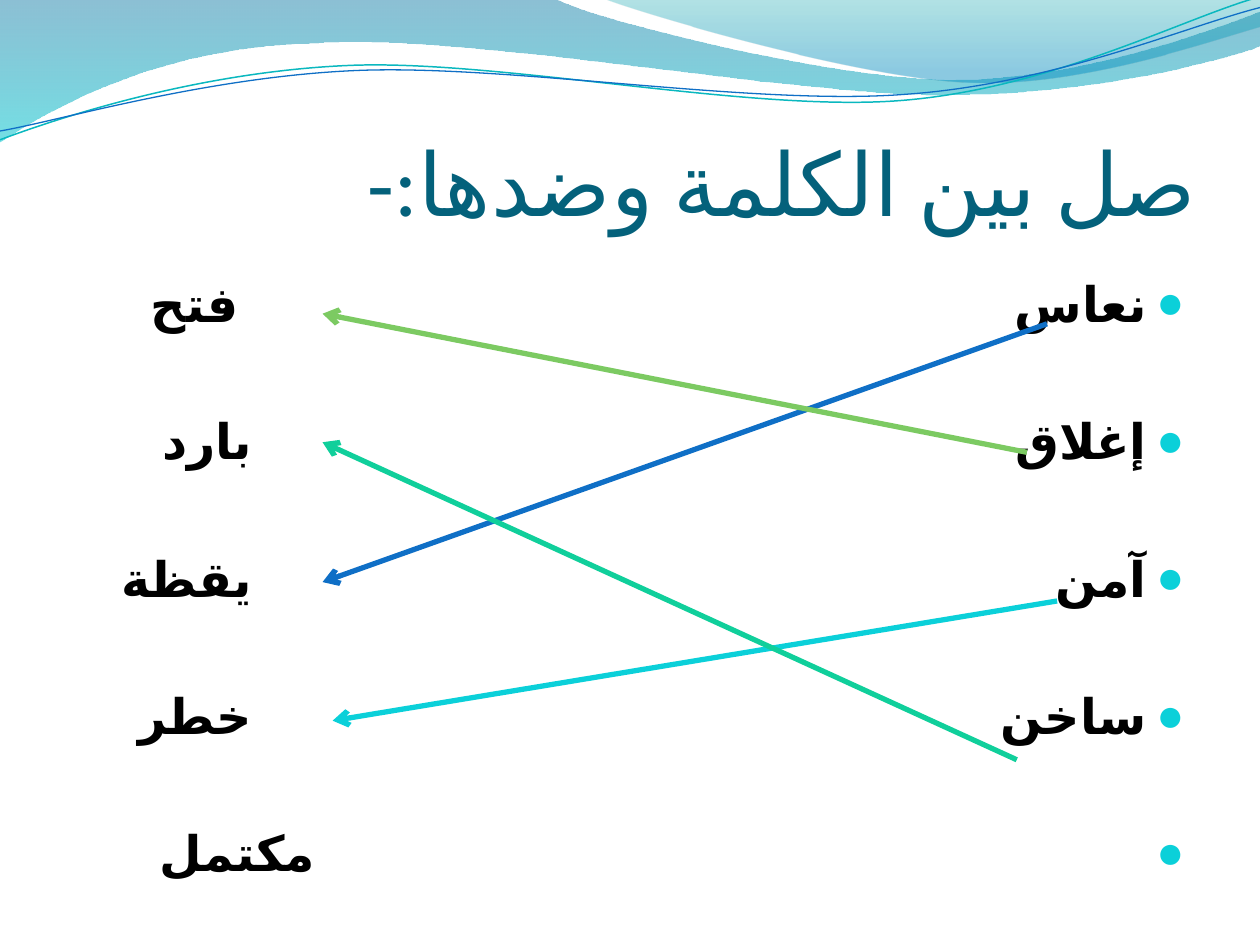
from lxml.etree import SubElement
from pptx import Presentation
from pptx.dml.color import RGBColor
from pptx.enum.lang import MSO_LANGUAGE_ID
from pptx.enum.shapes import MSO_CONNECTOR
from pptx.enum.text import MSO_ANCHOR, MSO_AUTO_SIZE, PP_ALIGN
from pptx.oxml.ns import qn
from pptx.util import Inches, Pt

DARK_TEAL = RGBColor(0x04, 0x61, 0x7B)
BLACK = RGBColor(0, 0, 0)
CYAN = RGBColor(0x0B, 0xD0, 0xD9)
BLUE = RGBColor(0x0F, 0x6F, 0xC6)
GREEN = RGBColor(0x7C, 0xCA, 0x62)
MINT = RGBColor(0x10, 0xCF, 0x9B)
WAVE_CYAN = RGBColor(0x0A, 0xB8, 0xBF)

HEADING = "صل بين الكلمة وضدها:-"
PROMPT_ROWS = [("نعاس", 0.3), ("إغلاق", 0.3), ("آمن", 0.3), ("ساخن", 0.3),
               ("مكتمل", 6.9)]
ANSWER_ROWS = [("فتح", 0.11), ("بارد", 0), ("يقظة", 0), ("خطر", 0)]
ROW_PITCH = Pt(78.5)

MATCHES = [
    ((8.31, 2.57), (2.56, 4.62), BLUE),
    ((8.15, 3.59), (2.56, 2.49), GREEN),
    ((8.39, 4.77), (2.64, 5.72), CYAN),
    ((8.07, 6.03), (2.56, 3.51), MINT),
]

WAVE_BANDS = [
    ([(0, 0), (4.4, -0.01),
      (4.76, 0.17, 6.64, 0.63, 7.58, 0.63), (8.53, 0.63, 9.58, 0.26, 10, 0.09),
      (10.01, 0.36),
      (9.83, 0.44, 8.7, 0.76, 7.46, 0.75), (6.22, 0.75, 3.82, 0.28, 2.57, 0.34),
      (1.29, 0.36, 0.46, 0.83, -0.01, 1.13), (0, 0)],
     [(0, "0074A1", 45), (100, "00C6CF", 55)]),
    ([(4.79, -0.01),
      (5.09, 0.11, 6.82, 0.62, 7.69, 0.65), (8.56, 0.69, 9.61, 0.32, 10, 0.21),
      (10, 0), (4.79, -0.01)],
     [(0, "00A1A9", 30), (80, "008BBF", 45)]),
]
WAVE_LINES = [
    ([(0, 1.11),
      (0.48, 0.93, 1.58, 0.57, 2.77, 0.52), (3.95, 0.47, 5.93, 0.89, 7.13, 0.8),
      (8.33, 0.71, 9.38, 0.15, 9.98, -0.02)], WAVE_CYAN, 0.85),
    ([(0, 1.04),
      (0.47, 0.96, 1.64, 0.61, 2.83, 0.56), (4.03, 0.51, 5.97, 0.84, 7.17, 0.75),
      (8.36, 0.67, 9.41, 0.21, 10, 0.06)], BLUE, 0.75),
]


def add_wave(slide, depth, segments, closed):
    points = [(Inches(x), Inches(y)) for segment in segments
              for x, y in zip(segment[::2], segment[1::2])]
    builder = slide.shapes.build_freeform(*points[0])
    builder.add_line_segments(points[1:], close=closed)
    wave = builder.convert_to_shape()
    wave.shadow.inherit = False
    bend(wave, segments)
    slide.shapes.element.insert(2 + depth, wave.element)
    return wave


def bend(wave, segments):
    outline = wave.element.spPr.find(".//" + qn("a:path"))
    steps = iter(outline.findall(qn("a:lnTo")))
    for segment in segments[1:]:
        step = next(steps)
        if len(segment) == 6:
            step.tag_name = None
            curve = outline.makeelement(qn("a:cubicBezTo"))
            step.addprevious(curve)
            for corner in (step, next(steps), next(steps)):
                curve.append(corner[0])
                outline.remove(corner)


def fill_gradient(wave, stops):
    wave.line.fill.background()
    wave.fill.gradient()
    wave.fill.gradient_angle = 270
    stop_list = wave.element.spPr.find(".//" + qn("a:gsLst"))
    for old_stop in list(stop_list):
        stop_list.remove(old_stop)
    for position, color, alpha in stops:
        stop = SubElement(stop_list, qn("a:gs"), pos=str(position * 1000))
        swatch = SubElement(stop, qn("a:srgbClr"), val=color)
        SubElement(swatch, qn("a:alpha"), val=str(alpha * 1000))


def place(holder, left, top, width, height):
    holder.left, holder.top = Inches(left), Inches(top)
    holder.width, holder.height = Inches(width), Inches(height)
    frame = holder.text_frame
    frame.word_wrap = True
    frame.auto_size = MSO_AUTO_SIZE.NONE
    return frame


def write(paragraph, text, *, font, size, color, bold=False, pitch=None,
          margin=0, bullet=None):
    paragraph.alignment = PP_ALIGN.RIGHT
    paragraph.space_before = Pt(0)
    if pitch:
        paragraph.line_spacing = pitch
    layout = paragraph._p.get_or_add_pPr()
    layout.set("rtl", "1")
    layout.set("marL", str(Inches(margin)))
    layout.set("indent", str(-Inches(margin) if bullet else 0))
    if bullet:
        SubElement(SubElement(layout, qn("a:buClr")), qn("a:srgbClr"), val=str(bullet))
        SubElement(layout, qn("a:buSzPct"), val="95000")
        SubElement(layout, qn("a:buChar"), char="●")
    else:
        SubElement(layout, qn("a:buNone"))
    run = paragraph.add_run()
    run.text = text
    run.font.name, run.font.size, run.font.bold = font, Pt(size), bold
    run.font.color.rgb = color
    run.font.language_id = MSO_LANGUAGE_ID.ARABIC
    SubElement(run._r.get_or_add_rPr(), qn("a:cs"), typeface=font)


def write_rows(frame, rows, bullet=None):
    for row, (text, margin) in enumerate(rows):
        paragraph = frame.add_paragraph() if row else frame.paragraphs[0]
        write(paragraph, text, font="Vollkorn", size=28, color=BLACK, bold=True,
              pitch=ROW_PITCH if row else None, margin=margin, bullet=bullet)


def add_match(slide, start, end, color):
    arrow = slide.shapes.add_connector(
        MSO_CONNECTOR.STRAIGHT, *(Inches(value) for value in start + end))
    arrow.line.color.rgb = color
    arrow.line.width = Pt(3)
    SubElement(arrow.line._get_or_add_ln(), qn("a:tailEnd"), type="arrow")
    SubElement(arrow.element.spPr, qn("a:effectLst"))


def main():
    deck = Presentation()
    deck.slide_width, deck.slide_height = Inches(10), Inches(7.5)
    slide = deck.slides.add_slide(deck.slide_layouts[3])
    title, prompts, answers = slide.placeholders

    for depth, (segments, stops) in enumerate(WAVE_BANDS):
        fill_gradient(add_wave(slide, depth, segments, True), stops)
    for depth, (segments, color, width) in enumerate(WAVE_LINES, len(WAVE_BANDS)):
        wave = add_wave(slide, depth, segments, False)
        wave.fill.background()
        wave.line.color.rgb = color
        wave.line.width = Pt(width)

    heading = place(title, 0.5, 0.77, 9, 1.09)
    heading.vertical_anchor = MSO_ANCHOR.BOTTOM
    heading.margin_left = heading.margin_right = heading.margin_bottom = 0
    write(heading.paragraphs[0], HEADING, font="Calibri", size=50, color=DARK_TEAL)

    write_rows(place(prompts, 0.5, 2.12, 9, 4.8), PROMPT_ROWS, bullet=CYAN)
    write_rows(place(answers, 0.5, 2.12, 1.6, 4.8), ANSWER_ROWS)

    for match in MATCHES:
        add_match(slide, *match)
    deck.save("out.pptx")


if __name__ == "__main__":
    main()
